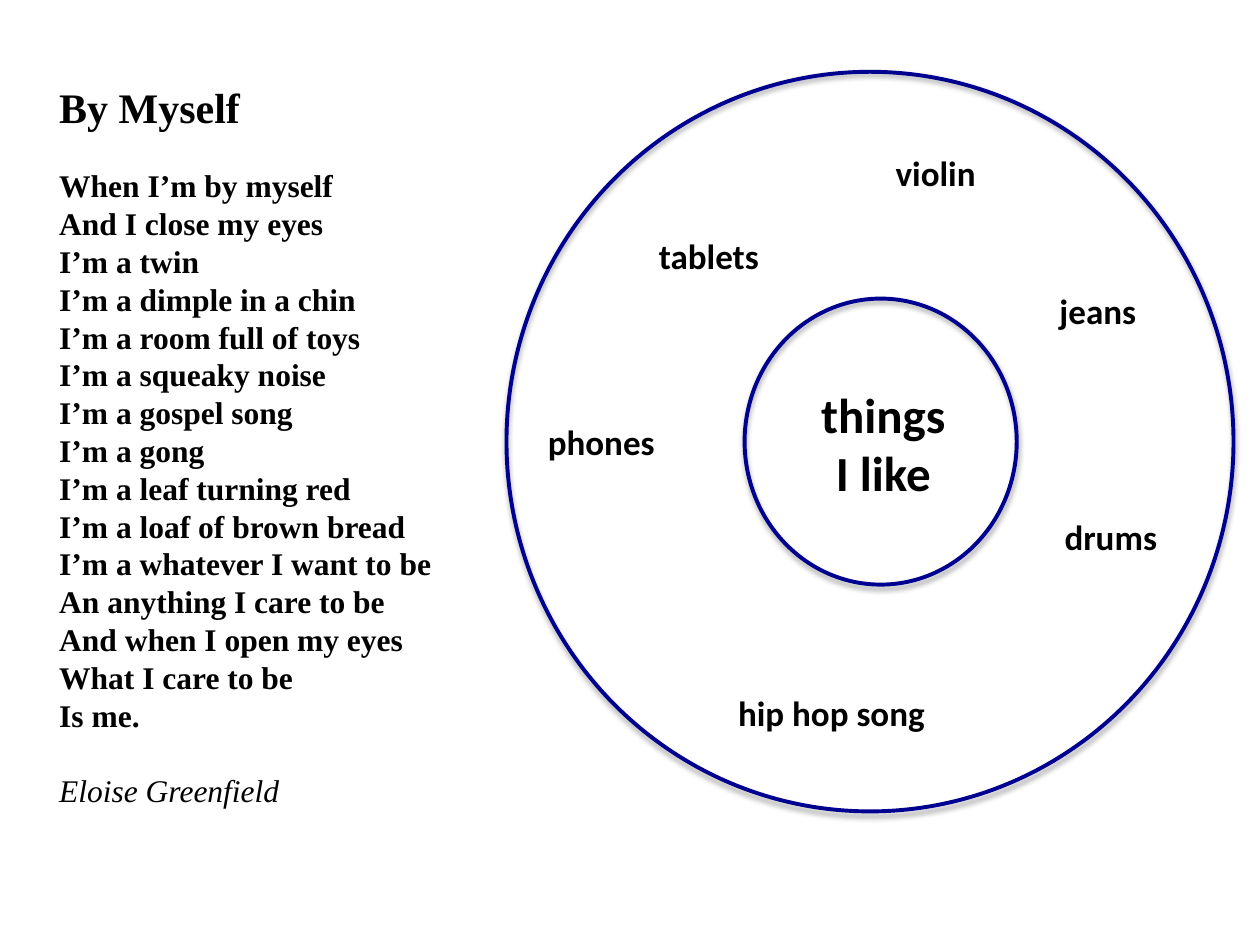
from dataclasses import dataclass

from lxml import etree
from pptx import Presentation
from pptx import util as u
from pptx.dml.color import RGBColor
from pptx.enum import shapes, text
from pptx.oxml import ns

COLORS = {"ink": "000000", "ring": "000090", "shadow": "000000"}
SERIF, SANS = "Times New Roman", "Calibri"
LINE_PITCH = 21.6

POEM = [
    "When I’m by myself",
    "And I close my eyes",
    "I’m a twin",
    "I’m a dimple in a chin",
    "I’m a room full of toys",
    "I’m a squeaky noise",
    "I’m a gospel song",
    "I’m a gong",
    "I’m a leaf turning red",
    "I’m a loaf of brown bread",
    "I’m a whatever I want to be",
    "An anything I care to be",
    "And when I open my eyes",
    "What I care to be",
    "Is me.",
]


@dataclass
class Box:
    left: float
    top: float
    width: float
    height: float

    def inches(self) -> tuple:
        return tuple(u.Inches(v) for v in (self.left, self.top, self.width, self.height))


@dataclass
class Label:
    lines: list[str]
    box: Box
    size: int = 20
    align: text.PP_ALIGN = text.PP_ALIGN.LEFT


RINGS = [Box(5.91, 2.37, 2.16, 2.27), Box(4.02, 0.57, 5.77, 5.87)]

LABELS = [
    Label(["phones"], Box(4.25, 3.29, 1.17, 0.44)),
    Label(["hip hop song"], Box(5.76, 5.44, 2, 0.44)),
    Label(["drums"], Box(8.35, 4.04, 1.11, 0.44)),
    Label(["violin"], Box(7.01, 1.15, 0.98, 0.44)),
    Label(["things", "I like"], Box(6.3, 3, 1.42, 1.04), 28, text.PP_ALIGN.CENTER),
    Label(["tablets"], Box(5.13, 1.81, 1.29, 0.44)),
    Label(["jeans"], Box(8.31, 2.25, 0.95, 0.44)),
]


def rgb(name: str) -> RGBColor:
    return RGBColor.from_string(COLORS[name])


def add_run(paragraph, words: str, font: str, size: int,
            bold: bool = True, italic: bool = False) -> None:
    run = paragraph.add_run()
    run.text = words
    run.font.name = font
    run.font.size = u.Pt(size)
    run.font.bold = bold
    run.font.italic = italic
    run.font.color.rgb = rgb("ink")


def place(holder, box: Box):
    holder.left, holder.top, holder.width, holder.height = box.inches()
    frame = holder.text_frame
    frame.word_wrap = True
    frame.auto_size = text.MSO_AUTO_SIZE.NONE
    frame.vertical_anchor = text.MSO_ANCHOR.TOP
    return frame


def next_paragraph(frame, index: int):
    return frame.paragraphs[0] if index == 0 else frame.add_paragraph()


def add_verse(frame, index: int, words: str, before: float = 0,
              bold: bool = True, italic: bool = False) -> None:
    verse = next_paragraph(frame, index)
    verse.line_spacing = u.Pt(LINE_PITCH)
    verse.space_before = u.Pt(before)
    properties = verse._p.get_or_add_pPr()
    properties.set("marL", "0")
    properties.set("indent", "0")
    etree.SubElement(properties, ns.qn("a:buNone"))
    add_run(verse, words, SERIF, 18, bold, italic)


def add_ring(slide, box: Box) -> None:
    ring = slide.shapes.add_shape(shapes.MSO_SHAPE.OVAL, *box.inches())
    ring.fill.background()
    ring.line.color.rgb = rgb("ring")
    ring.line.width = u.Pt(2.25)
    ring.shadow.inherit = False
    effects = ring._element.spPr.find(ns.qn("a:effectLst"))
    shadow = etree.SubElement(effects, ns.qn("a:outerShdw"), blurRad="40000",
                              dist="23000", dir="5400000", rotWithShape="0")
    tint = etree.SubElement(shadow, ns.qn("a:srgbClr"), val=COLORS["shadow"])
    etree.SubElement(tint, ns.qn("a:alpha"), val="35000")


def add_label(slide, label: Label) -> None:
    frame = place(slide.shapes.add_textbox(*label.box.inches()), label.box)
    for index, words in enumerate(label.lines):
        paragraph = next_paragraph(frame, index)
        paragraph.alignment = label.align
        add_run(paragraph, words, SANS, label.size)


def main() -> None:
    deck = Presentation()
    deck.slide_width, deck.slide_height = u.Inches(10), u.Inches(7.5)
    slide = deck.slides.add_slide(deck.slide_layouts[1])

    heading = place(slide.shapes.title, Box(0.37, 0.6, 4.36, 0.55)).paragraphs[0]
    heading.alignment = text.PP_ALIGN.LEFT
    add_run(heading, "By Myself", SERIF, 24)

    poem = place(slide.placeholders[1], Box(0.37, 1.27, 4.36, 5.56))
    for index, words in enumerate(POEM):
        add_verse(poem, index, words)
    add_verse(poem, len(POEM), "Eloise Greenfield", LINE_PITCH, bold=False, italic=True)

    for ring in RINGS:
        add_ring(slide, ring)
    for label in LABELS:
        add_label(slide, label)

    deck.save("out.pptx")


if __name__ == "__main__":
    main()
